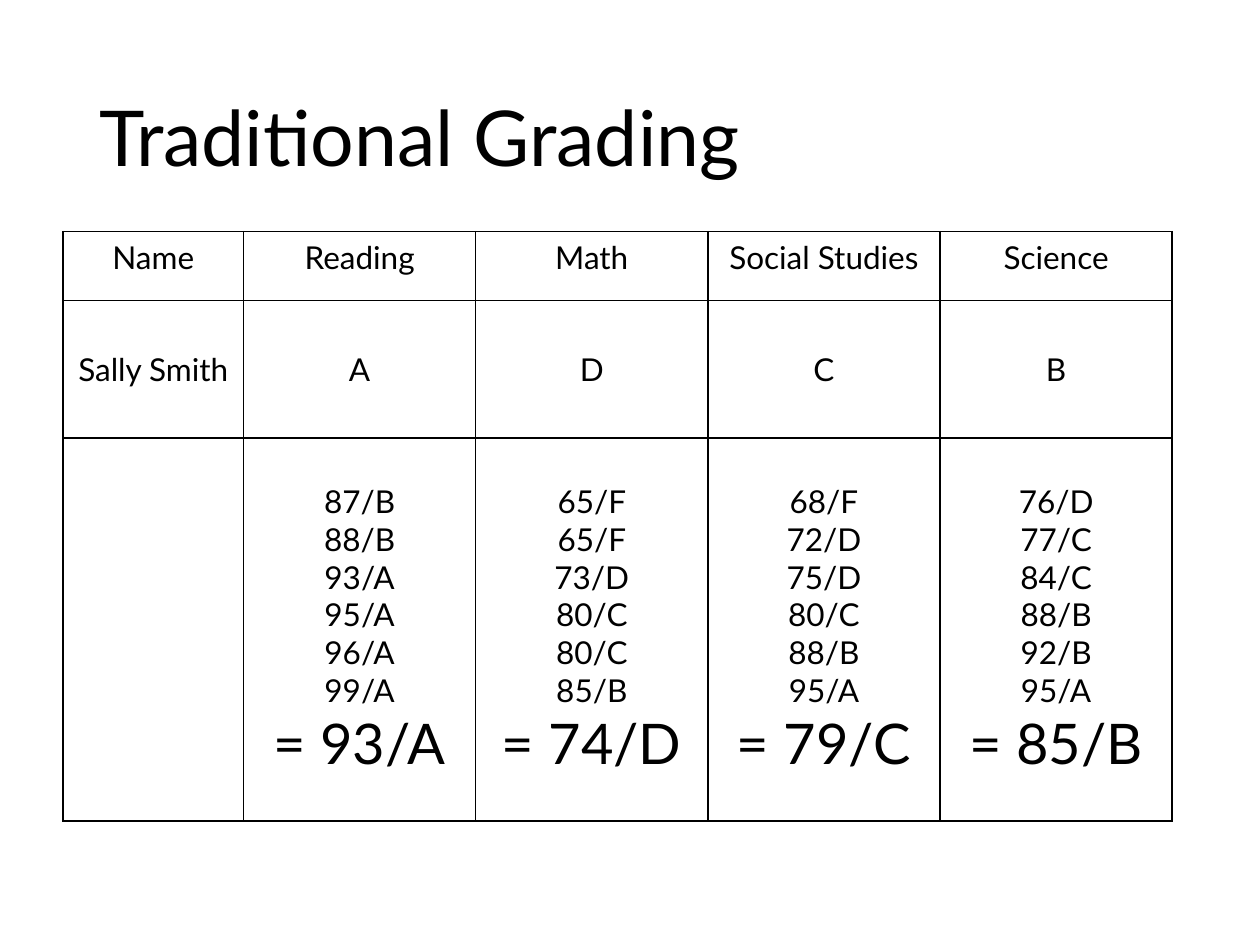
from dataclasses import dataclass

from lxml.etree import SubElement
from pptx import Presentation
from pptx.dml.color import RGBColor
from pptx.enum.text import MSO_ANCHOR as Anchor, PP_ALIGN as Align
from pptx.oxml.ns import qn
from pptx.slide import Slide
from pptx.table import _Cell as Cell
from pptx.text.text import _Paragraph as Paragraph
from pptx.util import Cm, Pt

FONT = "Lato"
INK = "000000"
BODY_SIZE = 18
AVERAGE_SIZE = 32


@dataclass(frozen=True)
class Subject:
    name: str
    grade: str
    scores: str
    average: str


SUBJECTS = [
    Subject("Reading", "A", "87/B 88/B 93/A 95/A 96/A 99/A", "93/A"),
    Subject("Math", "D", "65/F 65/F 73/D 80/C 80/C 85/B", "74/D"),
    Subject("Social Studies", "C", "68/F 72/D 75/D 80/C 88/B 95/A", "79/C"),
    Subject("Science", "B", "76/D 77/C 84/C 88/B 92/B 95/A", "85/B"),
]
STUDENT = "Sally Smith"
ROW_HEIGHTS = [1.39, 2.77, 7.72]
NAME_WIDTH = 3.64
SUBJECT_WIDTH = 4.68


def color(hex_code: str) -> RGBColor:
    return RGBColor.from_string(hex_code)


def style(paragraph: Paragraph, size: float) -> None:
    for run in paragraph.runs:
        run.font.name = FONT
        run.font.size = Pt(size)
        run.font.color.rgb = color(INK)


def draw_title(slide: Slide, wording: str) -> None:
    title = slide.shapes.add_textbox(Cm(1.75), Cm(1.02), Cm(21.9), Cm(3.68))
    frame = title.text_frame
    frame.word_wrap = True
    frame.vertical_anchor = Anchor.MIDDLE
    frame.text = wording
    frame.paragraphs[0].line_spacing = 0.9
    style(frame.paragraphs[0], 44)


def draw_borders(cell: Cell) -> None:
    properties = cell._tc.get_or_add_tcPr()
    for side in ("a:lnL", "a:lnR", "a:lnT", "a:lnB"):
        line = SubElement(properties, qn(side), w=str(Pt(1)))
        fill = SubElement(line, qn("a:solidFill"))
        SubElement(fill, qn("a:srgbClr"), val=INK)


def fill_cell(cell: Cell, lines: list[str], anchor: Anchor) -> None:
    draw_borders(cell)
    cell.fill.background()
    cell.vertical_anchor = anchor
    cell.text_frame.text = "\n".join(lines)
    for paragraph in cell.text_frame.paragraphs:
        paragraph.alignment = Align.CENTER
        style(paragraph, AVERAGE_SIZE if paragraph.text.startswith("=") else BODY_SIZE)


def draw_grades(slide: Slide) -> None:
    widths = [NAME_WIDTH] + [SUBJECT_WIDTH] * len(SUBJECTS)
    grades = slide.shapes.add_table(
        len(ROW_HEIGHTS), len(widths),
        Cm(1.27), Cm(4.67), Cm(sum(widths)), Cm(sum(ROW_HEIGHTS)),
    ).table
    grades.first_row = False
    grades.horz_banding = False
    for column, width in zip(grades.columns, widths):
        column.width = Cm(width)
    for row, height in zip(grades.rows, ROW_HEIGHTS):
        row.height = Cm(height)

    contents = [[["Name"], [STUDENT], [""]]]
    for subject in SUBJECTS:
        scores = subject.scores.split() + [f"= {subject.average}"]
        contents.append([[subject.name], [subject.grade], scores])
    for column_index, column_cells in enumerate(contents):
        for row_index, lines in enumerate(column_cells):
            anchor = Anchor.MIDDLE if row_index else Anchor.TOP
            fill_cell(grades.cell(row_index, column_index), lines, anchor)


def main() -> None:
    deck = Presentation()
    deck.slide_width, deck.slide_height = Cm(25.4), Cm(19.05)
    slide = deck.slides.add_slide(deck.slide_layouts[6])
    draw_title(slide, "Traditional Grading")
    draw_grades(slide)
    deck.save("out.pptx")


if __name__ == "__main__":
    main()
